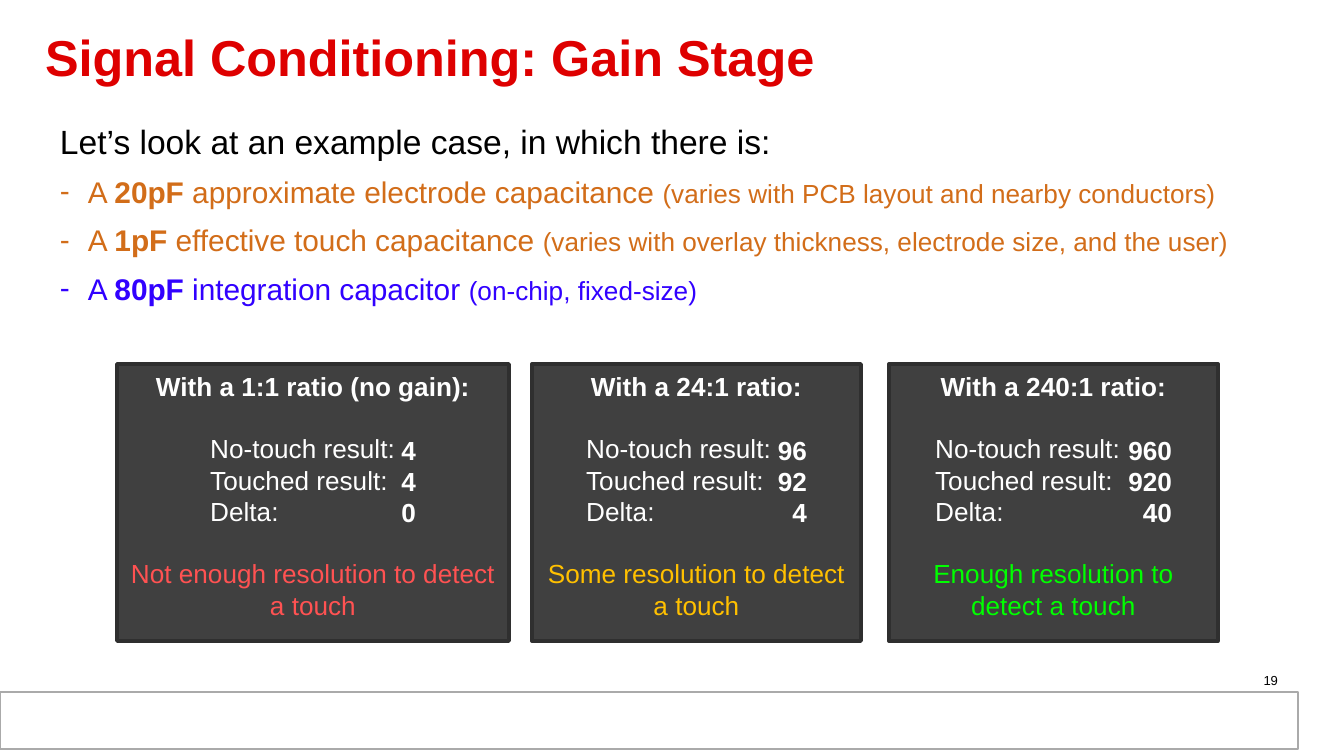
from lxml.etree import SubElement
from pptx import Presentation
from pptx.dml.color import RGBColor
from pptx.enum.shapes import MSO_SHAPE as Shape
from pptx.enum.text import MSO_ANCHOR as Anchor, PP_ALIGN as Align
from pptx.oxml.ns import qn
from pptx.util import Pt

PX = 6804
WHITE = RGBColor(0xFF, 0xFF, 0xFF)
BLACK = RGBColor(0, 0, 0)
TITLE_RED = RGBColor(0xDE, 0, 0)
ORANGE = RGBColor(0xD2, 0x6D, 0x19)
BLUE = RGBColor(0x31, 0x01, 0xFF)
BOX_FILL = RGBColor(0x40, 0x40, 0x40)
BOX_LINE = RGBColor(0x2F, 0x2F, 0x2F)
FOOTER_LINE = RGBColor(0xAA, 0xAA, 0xAA)
RED = RGBColor(0xFF, 0x52, 0x52)
AMBER = RGBColor(0xFF, 0xC0, 0)
GREEN = RGBColor(0, 0xFF, 0)

presentation = Presentation()
presentation.slide_width = 1344 * PX
presentation.slide_height = 756 * PX
slide = presentation.slides.add_slide(presentation.slide_layouts[6])


def add_text_frame(left, top, width, height):
    box = slide.shapes.add_textbox(left * PX, top * PX, width * PX, height * PX)
    frame = box.text_frame
    frame.word_wrap = True
    frame.margin_left = frame.margin_right = 11 * PX
    frame.margin_top = frame.margin_bottom = 5 * PX
    return frame


def add_run(paragraph, text, size, color, bold=False):
    run = paragraph.add_run()
    run.text = text
    run.font.name = "Arial"
    run.font.size = Pt(size)
    run.font.bold = bold
    run.font.color.rgb = color


# Footer band
footer = slide.shapes.add_shape(Shape.RECTANGLE, 0, 692 * PX, 1298 * PX, 57 * PX)
footer.shadow.inherit = False
footer.fill.solid()
footer.fill.fore_color.rgb = WHITE
footer.line.color.rgb = FOOTER_LINE
footer.line.width = Pt(0.75)

# Title
frame = add_text_frame(34, 16, 1243, 90)
frame.vertical_anchor = Anchor.MIDDLE
frame.paragraphs[0].line_spacing = 0.85
add_run(frame.paragraphs[0], "Signal Conditioning: Gain Stage", 27, TITLE_RED, True)

# Example case
frame = add_text_frame(49, 116, 1244, 302)
add_run(frame.paragraphs[0], "Let’s look at an example case, in which there is:", 18, BLACK)
components = [
    ("20pF", " approximate electrode capacitance ",
     "(varies with PCB layout and nearby conductors)", ORANGE),
    ("1pF", " effective touch capacitance ",
     "(varies with overlay thickness, electrode size, and the user)", ORANGE),
    ("80pF", " integration capacitor ", "(on-chip, fixed-size)", BLUE),
]
for value, component, remark, color in components:
    paragraph = frame.add_paragraph()
    paragraph.space_before = Pt(6.7)
    properties = paragraph._p.get_or_add_pPr()
    properties.set("marL", str(28 * PX))
    properties.set("indent", str(-28 * PX))
    SubElement(properties, qn("a:buFont"), typeface="Arial")
    SubElement(properties, qn("a:buChar"), char="-")
    add_run(paragraph, "A ", 16, color)
    add_run(paragraph, value, 16, color, True)
    add_run(paragraph, component, 16, color)
    add_run(paragraph, remark, 14, color)

# Page number
frame = add_text_frame(976, 667, 313, 23)
frame.paragraphs[0].alignment = Align.RIGHT
add_run(frame.paragraphs[0], "19", 7, BLACK)

# Gain ratios: left, width, label indent, right edge of the values
LABELS = ("No-touch result:", "Touched result:", "Delta:")
BLANK_LINE = Pt(16.5)
VALUES_WIDTH = 70
ratios = [
    (117, 392, 80, 416, "With a 1:1 ratio (no gain):", ("4", "4", "0"),
     "Not enough resolution to detect a touch", RED),
    (532, 329, 41, 807, "With a 24:1 ratio:", ("96", "92", "4"),
     "Some resolution to detect a touch", AMBER),
    (889, 329, 33, 1172, "With a 240:1 ratio:", ("960", "920", "40"),
     "Enough resolution to detect a touch", GREEN),
]
for left, width, indent, values_right, heading, values, verdict, color in ratios:
    box = slide.shapes.add_shape(
        Shape.RECTANGLE, left * PX, 364 * PX, width * PX, 277 * PX)
    box.shadow.inherit = False
    box.fill.solid()
    box.fill.fore_color.rgb = BOX_FILL
    box.line.color.rgb = BOX_LINE
    box.line.width = Pt(2)
    frame = box.text_frame
    frame.word_wrap = True
    frame.vertical_anchor = Anchor.TOP

    paragraph = frame.paragraphs[0]
    paragraph.alignment = Align.CENTER
    add_run(paragraph, heading, 14, WHITE, True)

    for row, label in enumerate(LABELS):
        paragraph = frame.add_paragraph()
        paragraph.alignment = Align.LEFT
        if row == 0:
            paragraph.space_before = BLANK_LINE
        paragraph._p.get_or_add_pPr().set("marL", str(indent * PX))
        add_run(paragraph, label, 14, WHITE)

    paragraph = frame.add_paragraph()
    paragraph.alignment = Align.CENTER
    paragraph.space_before = BLANK_LINE
    add_run(paragraph, verdict, 14, color)

    frame = add_text_frame(values_right - VALUES_WIDTH, 429, VALUES_WIDTH, 104)
    frame.margin_left = frame.margin_right = 0
    for row, value in enumerate(values):
        paragraph = frame.add_paragraph() if row else frame.paragraphs[0]
        paragraph.alignment = Align.RIGHT
        add_run(paragraph, value, 14, WHITE, True)

presentation.save("out.pptx")
